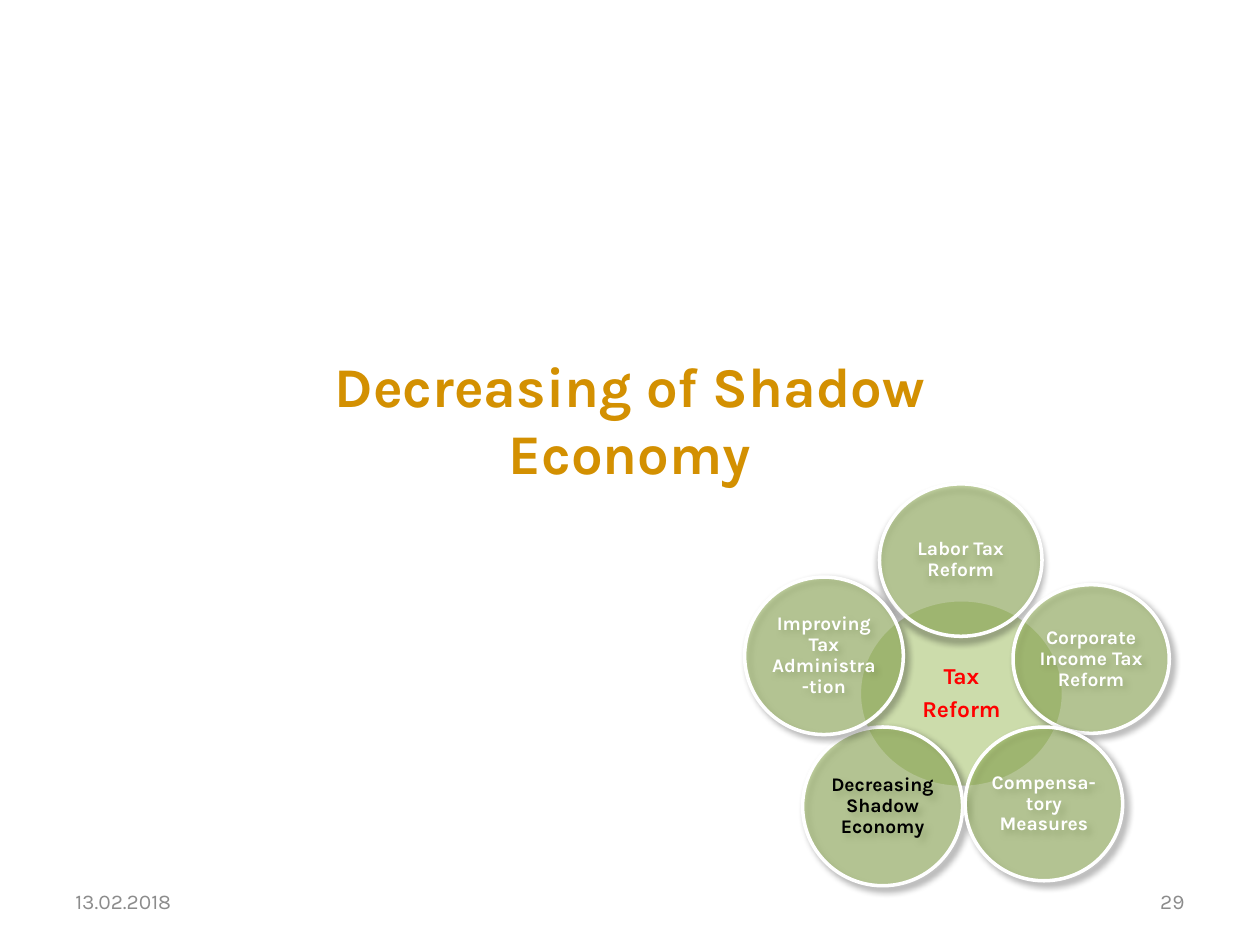
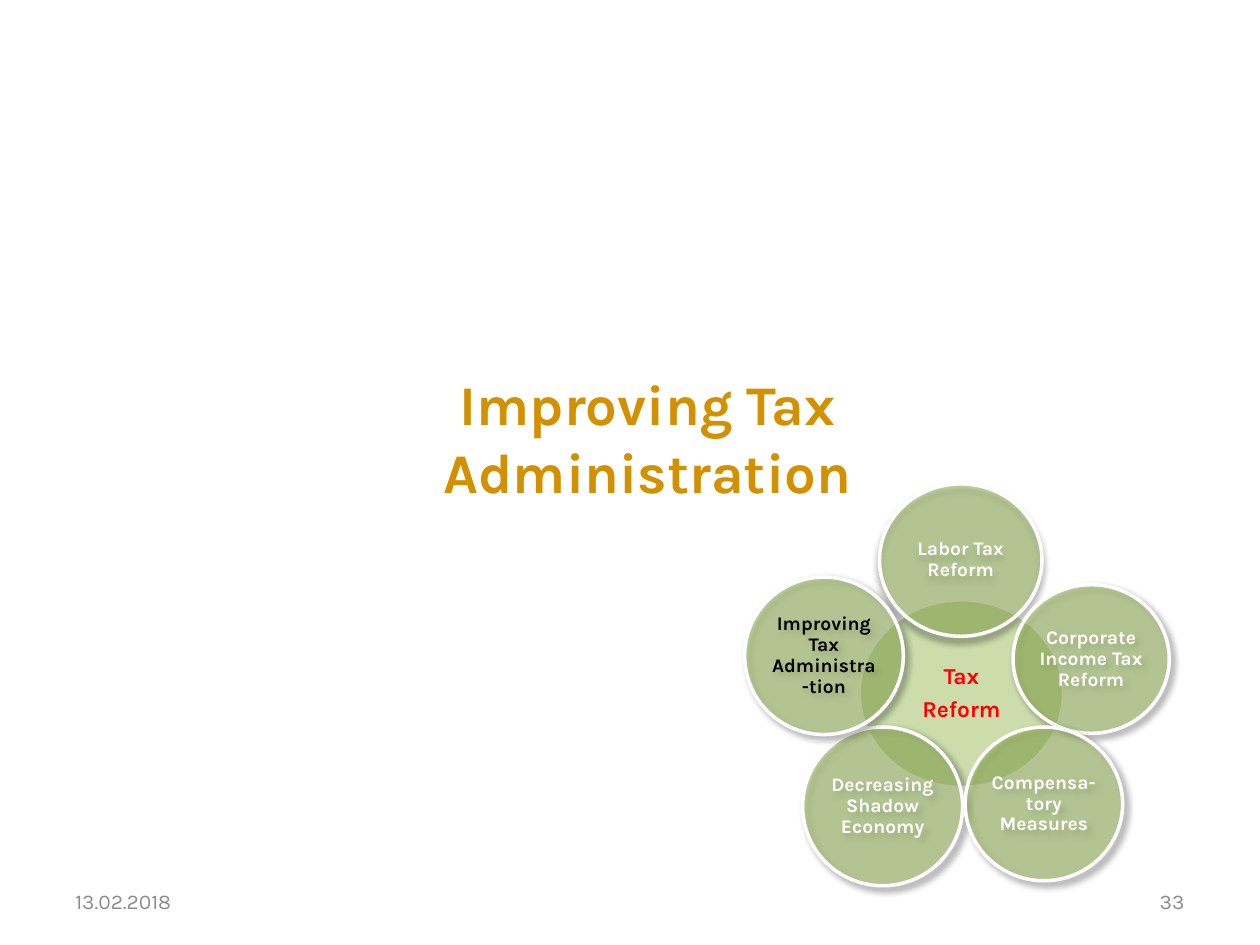
from lxml.etree import SubElement
from pptx import Presentation
from pptx.dml.color import RGBColor
from pptx.enum.shapes import MSO_SHAPE
from pptx.enum.text import MSO_ANCHOR, MSO_AUTO_SIZE, PP_ALIGN
from pptx.oxml.ns import qn
from pptx.util import Inches, Pt

FONT = "Karla"
GOLD, GREEN, RED, GREY = "D39001", "9BBB59", "FF0000", "8C8C8C"
WHITE, BLACK = "FFFFFF", "000000"
TITLE_SIZE = (6.46, 1.02)
DATE = "13.02.2018"

# title, title position, page number, highlighted petal
SECTIONS = [
    ("Decreasing of Shadow Economy", (1.77, 2.81), "29", "Decreasing Shadow Economy"),
    ("Improving Tax Administration", (1.91, 2.96), "33", "Improving Tax Administra-tion"),
]
HUB = (["Tax", "Reform"], (6.82, 4.76, 1.62, 1.49))
# label, box, shadow direction in degrees
PETALS = [
    ("Labor Tax Reform", (6.98, 3.84, 1.29, 1.21), 90),
    ("Corporate Income Tax Reform", (8.04, 4.64, 1.24, 1.18), 45),
    ("Decreasing Shadow Economy", (6.37, 5.77, 1.27, 1.26), 45),
    ("Compensa-tory Measures", (7.66, 5.77, 1.25, 1.22), 45),
    ("Improving Tax Administra-tion", (5.91, 4.58, 1.26, 1.25), 45),
]
FOOTER_TOP, FOOTER_WIDTH, FOOTER_HEIGHT, MARGIN = 6.95, 2.33, 0.4, 0.5


def color(hex_value):
    return RGBColor.from_string(hex_value)


def inches(box):
    return [Inches(length) for length in box]


def write(shape, lines, size, hex_value, align, bold=False):
    frame = shape.text_frame
    frame.text = "\n".join(lines)
    frame.word_wrap = True
    frame.auto_size = MSO_AUTO_SIZE.NONE
    frame.vertical_anchor = MSO_ANCHOR.MIDDLE
    for paragraph in frame.paragraphs:
        paragraph.alignment = align
        font = paragraph.font
        font.name, font.size, font.bold = FONT, Pt(size), bold
        font.color.rgb = color(hex_value)
    return frame


def set_alpha(color_element, percent):
    SubElement(color_element, qn("a:alpha"), val=str(percent * 1000))


def add_shadow(shape, direction):
    effects = shape._element.spPr.find(qn("a:effectLst"))
    shadow = SubElement(effects, qn("a:outerShdw"), blurRad=str(Pt(4)), dist=str(Pt(3)),
                        dir=str(direction * 60000), algn="tl", rotWithShape="0")
    set_alpha(SubElement(shadow, qn("a:srgbClr"), val=BLACK), 40)


def add_circle(group, lines, box, size, text_color):
    """Add a half-transparent green circle with a white rim and centred bold text."""
    circle = group.shapes.add_shape(MSO_SHAPE.OVAL, *inches(box))
    circle.fill.solid()
    circle.fill.fore_color.rgb = color(GREEN)
    set_alpha(circle._element.spPr.find(qn("a:solidFill"))[0], 50)
    circle.line.color.rgb = color(WHITE)
    circle.line.width = Pt(2)
    circle.shadow.inherit = False
    frame = write(circle, lines, size, text_color, PP_ALIGN.CENTER, bold=True)
    frame.margin_left = frame.margin_right = Inches(0.02)
    frame.margin_top = frame.margin_bottom = Inches(0.02)
    for paragraph in frame.paragraphs:
        paragraph.line_spacing = 0.9
        paragraph.space_after = Pt(0.35 * size)
    return circle


def add_flower(slide, highlighted):
    """Draw the hub and its petals, with one petal label in black."""
    group = slide.shapes.add_group_shape()
    add_circle(group, *HUB, 13, RED)
    for label, box, direction in PETALS:
        text_color = BLACK if label == highlighted else WHITE
        petal = add_circle(group, [label], box, 11, text_color)
        add_shadow(petal, direction)


def add_footer(slide, page):
    right = 10 - MARGIN - FOOTER_WIDTH
    for text, left, align in ((DATE, MARGIN, PP_ALIGN.LEFT), (page, right, PP_ALIGN.RIGHT)):
        box = slide.shapes.add_textbox(*inches((left, FOOTER_TOP, FOOTER_WIDTH, FOOTER_HEIGHT)))
        write(box, [text], 12, GREY, align)


def main():
    presentation = Presentation()
    presentation.slide_width, presentation.slide_height = Inches(10), Inches(7.5)
    title_only = presentation.slide_layouts.get_by_name("Title Only")
    for heading, position, page, highlighted in SECTIONS:
        slide = presentation.slides.add_slide(title_only)
        title = slide.shapes.title
        title.left, title.top, title.width, title.height = inches(position + TITLE_SIZE)
        write(title, [heading], 32, GOLD, PP_ALIGN.CENTER, bold=True)
        add_footer(slide, page)
        add_flower(slide, highlighted)
    presentation.save("out.pptx")


if __name__ == "__main__":
    main()
